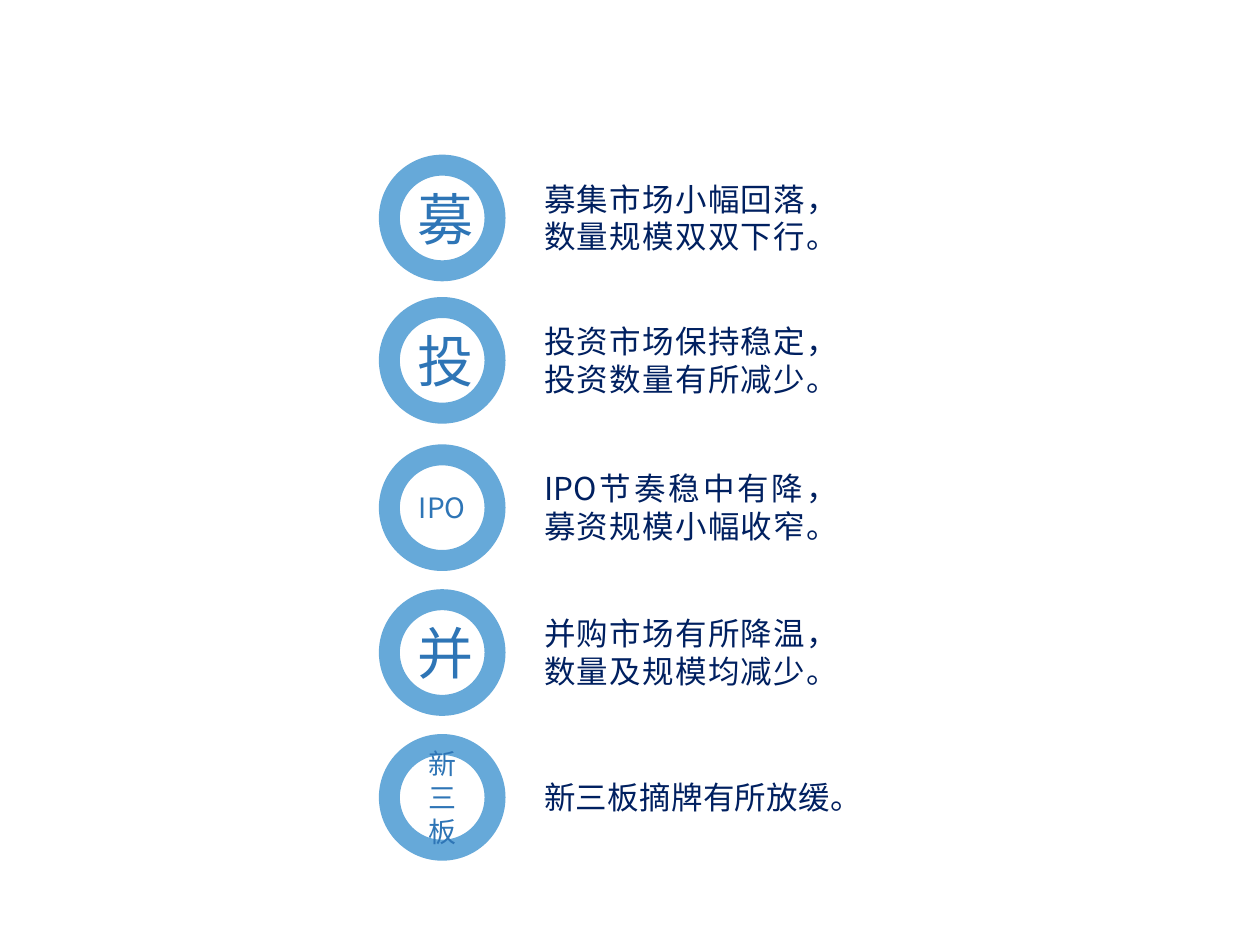
from lxml.etree import SubElement
from pptx import Presentation
from pptx.dml.color import RGBColor
from pptx.enum.shapes import MSO_SHAPE as Shape
from pptx.enum.text import MSO_ANCHOR as Anchor, MSO_AUTO_SIZE as AutoSize, PP_ALIGN as Align
from pptx.oxml.ns import qn
from pptx.util import Cm, Pt

RING_BLUE = RGBColor(0x00, 0x70, 0xC0)
LABEL_BLUE = RGBColor(0x2E, 0x75, 0xB6)
NAVY = RGBColor(0x00, 0x20, 0x60)
LABEL_FONT = "Noto Sans CJK JP"
BODY_FONT = "Noto Sans CJK SC"

LEFT = 7.85
RING_SIZE = 2.13
TEXT_OFFSET = 2.87
TWO_LINES = (5.79, 1.8)
ONE_LINE = (6.27, 1.02)

TOPICS = [
    (3.33, "募", 32, TWO_LINES, ["募集市场小幅回落，", "数量规模双双下行。"]),
    (6.2, "投", 32, TWO_LINES, ["投资市场保持稳定，", "投资数量有所减少。"]),
    (9.17, "IPO", 16, TWO_LINES, ["IPO节奏稳中有降，", "募资规模小幅收窄。"]),
    (12.09, "并", 32, TWO_LINES, ["并购市场有所降温，", "数量及规模均减少。"]),
    (15.01, "新三板", 16, ONE_LINE, ["新三板摘牌有所放缓。"]),
]


def add_span(para, text, size, font, color, align):
    para.alignment = align
    span = para.add_run()
    span.text = text
    span.font.size = Pt(size)
    span.font.name = font
    span.font.color.rgb = color
    SubElement(span.font._element, qn("a:ea")).set("typeface", font)


def add_ring(page, left, top, label, size):
    ring = page.shapes.add_shape(Shape.OVAL, Cm(left), Cm(top), Cm(RING_SIZE), Cm(RING_SIZE))
    ring.shadow.inherit = False
    ring.fill.background()
    ring.line.width = Pt(12)
    ring.line.color.rgb = RING_BLUE
    color = ring.line._ln.find(".//" + qn("a:srgbClr"))
    SubElement(color, qn("a:alpha")).set("val", "60000")
    frame = ring.text_frame
    frame.word_wrap = True
    frame.vertical_anchor = Anchor.MIDDLE
    add_span(frame.paragraphs[0], label, size, LABEL_FONT, LABEL_BLUE, Align.CENTER)


def add_summary(page, left, middle, size, lines):
    width, height = size
    box = page.shapes.add_textbox(Cm(left), Cm(middle - height / 2), Cm(width), Cm(height))
    frame = box.text_frame
    frame.word_wrap = True
    frame.auto_size = AutoSize.SHAPE_TO_FIT_TEXT
    for index, line in enumerate(lines):
        para = frame.add_paragraph() if index else frame.paragraphs[0]
        add_span(para, line, 18, BODY_FONT, NAVY, Align.JUSTIFY)


def add_topic(page, left, top, label, label_size, summary_size, lines):
    add_ring(page, left, top, label, label_size)
    add_summary(page, left + TEXT_OFFSET, top + RING_SIZE / 2, summary_size, lines)


def main():
    deck = Presentation()
    deck.slide_width, deck.slide_height = Cm(25.4), Cm(19.05)
    page = deck.slides.add_slide(deck.slide_layouts[6])
    for topic in TOPICS:
        add_topic(page, LEFT, *topic)
    deck.save("out.pptx")


if __name__ == "__main__":
    main()
